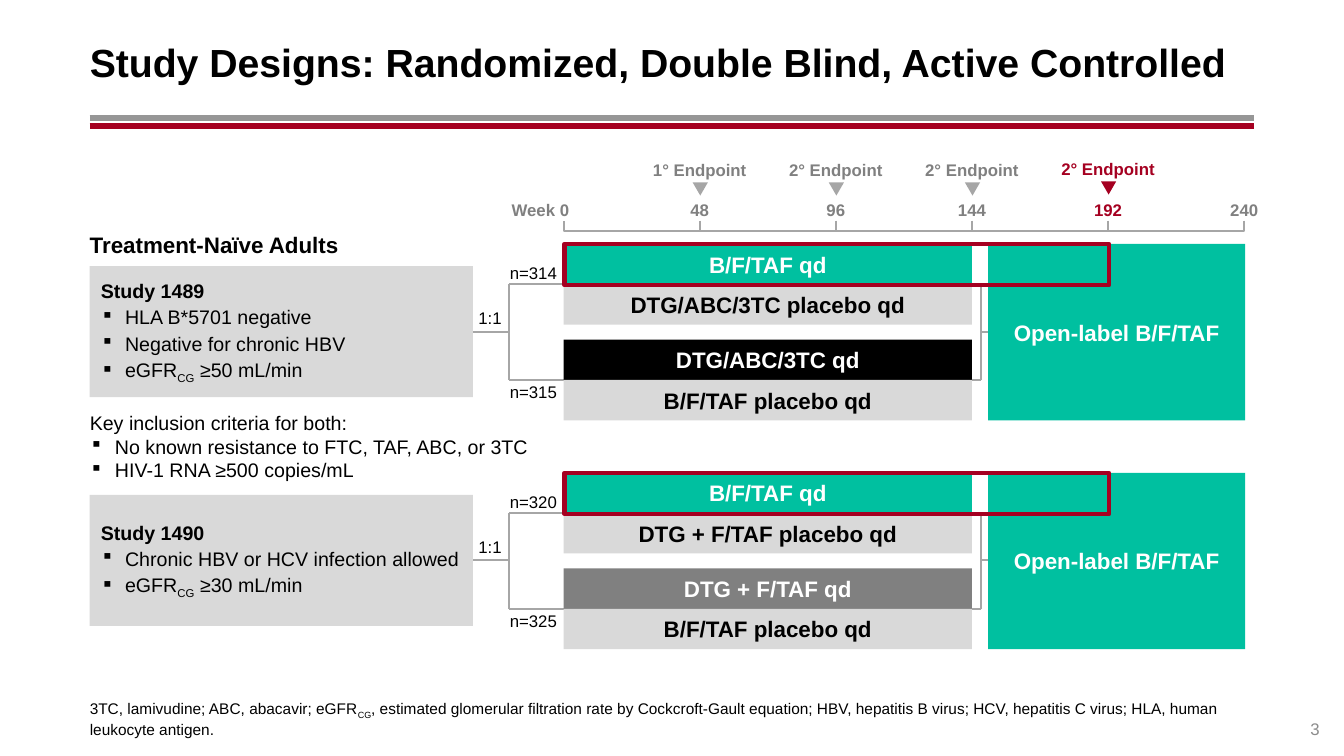
from lxml.etree import SubElement
from pptx import Presentation
from pptx.dml.color import RGBColor
from pptx.enum.shapes import MSO_CONNECTOR as LineKind, MSO_SHAPE as Preset
from pptx.enum.text import MSO_ANCHOR as Anchor, MSO_AUTO_SIZE as AutoSize, PP_ALIGN as Align
from pptx.oxml.ns import qn
from pptx.util import Pt

PX = 9144
COLORS = {
    "black": "000000", "white": "FFFFFF", "red": "A50021", "teal": "00C0A0",
    "pale": "D9D9D9", "line": "A6A6A6", "gray": "808080", "rule": "969696",
    "number": "8C8C8C",
}
WEEK_ZERO, WEEK_STEP = 559, 135
BAR_LEFT, BAR_WIDTH, BAR_HEIGHT = 559, 405, 40
BAR_OFFSETS = (0, 40, 95, 135)
OPEN_LEFT, OPEN_WIDTH, OPEN_HEIGHT = 980, 255, 175
STUDIES = [
    {
        "top": 242,
        "criteria": ["Study 1489", "HLA B*5701 negative", "Negative for chronic HBV",
                     "eGFR_CG_ ≥50 mL/min"],
        "sizes": ("n=314", "n=315"),
        "arms": [("B/F/TAF qd", "teal", "white"), ("DTG/ABC/3TC placebo qd", "pale", "black"),
                 ("DTG/ABC/3TC qd", "black", "white"), ("B/F/TAF placebo qd", "pale", "black")],
    },
    {
        "top": 469,
        "criteria": ["Study 1490", "Chronic HBV or HCV infection allowed",
                     "eGFR_CG_ ≥30 mL/min"],
        "sizes": ("n=320", "n=325"),
        "arms": [("B/F/TAF qd", "teal", "white"), ("DTG + F/TAF placebo qd", "pale", "black"),
                 ("DTG + F/TAF qd", "gray", "white"), ("B/F/TAF placebo qd", "pale", "black")],
    },
]
ENDPOINTS = [("48", "1° Endpoint", "gray"), ("96", "2° Endpoint", "gray"),
             ("144", "2° Endpoint", "gray"), ("192", "2° Endpoint", "red")]


def rgb(name):
    return RGBColor.from_string(COLORS[name])


def emu(*lengths):
    return [length * PX for length in lengths]


def set_frame(frame, insets=(0, 0, 0, 0), anchor=Anchor.TOP, wrap=True):
    frame.auto_size = AutoSize.NONE
    frame.word_wrap = wrap
    frame.vertical_anchor = anchor
    (frame.margin_left, frame.margin_top,
     frame.margin_right, frame.margin_bottom) = emu(*insets)


def set_indent(para, left, hanging, bullet):
    props = para._p.get_or_add_pPr()
    props.set("marL", str(left * PX))
    props.set("indent", str(-hanging * PX))
    if bullet:
        SubElement(props, qn("a:buSzPct")).set("val", "90000")
        SubElement(props, qn("a:buChar")).set("char", "▪")
    else:
        SubElement(props, qn("a:buNone"))


def fill_para(para, text, size, color="black", bold=False, align=Align.LEFT, before=0):
    para.alignment = align
    para.space_before = Pt(before)
    font = para.font
    font.name, font.size, font.bold = "Arial", Pt(size), bold
    font.color.rgb = rgb(color)
    for index, part in enumerate(text.split("_")):
        span = para.add_run()
        span.text = part
        if index % 2:
            span.font._element.set("baseline", "-25000")


def add_list(frame, lines, left, hanging, bold_head, before=0):
    for index, line in enumerate(lines):
        para = frame.add_paragraph() if index else frame.paragraphs[0]
        if index:
            set_indent(para, left, hanging, True)
        fill_para(para, line, 14, bold=bold_head and not index, before=before)


def add_box(page, *place):
    return page.shapes.add_textbox(*emu(*place))


def add_label(page, text, center, middle, color="black", bold=False):
    box = add_box(page, center - 24, middle - 10, 48, 20)
    set_frame(box.text_frame, anchor=Anchor.MIDDLE, wrap=False)
    fill_para(box.text_frame.paragraphs[0], text, 12, color, bold, Align.CENTER)


def add_block(page, place, fill=None, kind=Preset.RECTANGLE):
    block = page.shapes.add_shape(kind, *emu(*place))
    block.shadow.inherit = False
    block.line.fill.background()
    if fill:
        block.fill.solid()
        block.fill.fore_color.rgb = rgb(fill)
    else:
        block.fill.background()
    return block


def add_bar(page, text, place, fill, color):
    bar = add_block(page, place, fill)
    set_frame(bar.text_frame, (10, 5, 10, 5), Anchor.MIDDLE)
    fill_para(bar.text_frame.paragraphs[0], text, 16, color, True, Align.CENTER)


def add_line(page, start, end, color="line", width=1.5, arrow=False):
    line = page.shapes.add_connector(LineKind.STRAIGHT, *emu(*start, *end))
    line.line.color.rgb = rgb(color)
    line.line.width = Pt(width)
    if arrow:
        SubElement(line.line._get_or_add_ln(), qn("a:tailEnd")).set("type", "triangle")
    SubElement(line._element.spPr, qn("a:effectLst"))


def add_week_bracket(page, left):
    right, top, base = left + WEEK_STEP, 219, 229
    builder = page.shapes.build_freeform(right, top, PX)
    builder.add_line_segments([(right, base), (left, base), (left, top)], close=False)
    bracket = builder.convert_to_shape()
    bracket.shadow.inherit = False
    bracket.fill.background()
    bracket.line.color.rgb = rgb("line")
    bracket.line.width = Pt(1.5)


def add_timeline(page):
    add_label(page, "Week 0", 536, 208, "gray", True)
    add_label(page, "240", WEEK_ZERO + 5 * WEEK_STEP, 208, "gray", True)
    for index in range(5):
        add_week_bracket(page, WEEK_ZERO + index * WEEK_STEP)
    for index, (week, endpoint, color) in enumerate(ENDPOINTS, 1):
        center = WEEK_ZERO + index * WEEK_STEP
        lift = 1 if color == "red" else 0
        add_label(page, week, center, 208, color, True)
        add_label(page, endpoint, center, 168 - lift, color, True)
        marker = add_block(page, (center - 7, 181 - lift, 15, 13),
                           "red" if lift else "line", Preset.ISOSCELES_TRIANGLE)
        marker.rotation = 180


def add_study(page, top, criteria, sizes, arms):
    upper, middle, lower = top + 40, top + 87, top + 135
    add_line(page, (455, middle), (505, middle))
    add_line(page, (505, upper), (505, lower))
    add_line(page, (973, upper), (973, lower))
    add_line(page, (973, middle), (980, middle))
    for branch in (upper, lower):
        add_line(page, (505, branch), (611, branch), arrow=True)
        add_line(page, (973, branch), (958, branch))
    add_label(page, "1:1", 486, top + 73)
    for size, level in zip(sizes, (top + 29, top + 147)):
        add_label(page, size, 529, level)

    card = add_block(page, (89, top + 22, 380, 130), "pale")
    set_frame(card.text_frame, (11, 5, 0, 5), Anchor.MIDDLE)
    add_list(card.text_frame, criteria, 24, 24, True, before=2)

    add_bar(page, "Open-label B/F/TAF", (OPEN_LEFT, top, OPEN_WIDTH, OPEN_HEIGHT),
            "teal", "white")
    for (text, fill, color), offset in zip(arms, BAR_OFFSETS):
        add_bar(page, text, (BAR_LEFT, top + offset, BAR_WIDTH, BAR_HEIGHT), fill, color)
    outline = add_block(page, (560, top, 540, 41))
    outline.line.color.rgb = rgb("red")
    outline.line.width = Pt(3)


def place_text(holder, place, text, size, insets, anchor, bold=False):
    holder.left, holder.top, holder.width, holder.height = emu(*place)
    set_frame(holder.text_frame, insets, anchor)
    para = holder.text_frame.paragraphs[0]
    set_indent(para, 0, 0, False)
    fill_para(para, text, size, bold=bold)


def main():
    deck = Presentation()
    deck.slide_width, deck.slide_height = emu(1333, 750)
    page = deck.slides.add_slide(deck.slide_layouts[1])
    place_text(page.shapes.title, (89, 18, 1155, 86),
               "Study Designs: Randomized, Double Blind, Active Controlled",
               28, (0, 5, 10, 5), Anchor.MIDDLE, True)
    place_text(page.placeholders[1], (89, 696, 1155, 37),
               "3TC, lamivudine; ABC, abacavir; eGFR_CG_, estimated glomerular filtration rate by "
               "Cockcroft-Gault equation; HBV, hepatitis B virus; HCV, hepatitis C virus; "
               "HLA, human leukocyte antigen.", 11, (0, 0, 0, 0), Anchor.BOTTOM)
    for level, color in ((117, "rule"), (125, "red")):
        add_line(page, (89, level), (1244, level), color, 4.25)

    add_timeline(page)
    for study in STUDIES:
        add_study(page, **study)

    heading = add_box(page, 89, 224, 266, 37)
    set_frame(heading.text_frame, (0, 5, 10, 5))
    fill_para(heading.text_frame.paragraphs[0], "Treatment-Naïve Adults", 16, bold=True)

    inclusion = add_box(page, 89, 408, 442, 71)
    set_frame(inclusion.text_frame)
    add_list(inclusion.text_frame,
             ["Key inclusion criteria for both:", "No known resistance to FTC, TAF, ABC, or 3TC",
              "HIV-1 RNA ≥500 copies/mL"], 25, 25, False)

    number = add_box(page, 1244, 693, 65, 40)
    set_frame(number.text_frame, anchor=Anchor.BOTTOM)
    fill_para(number.text_frame.paragraphs[0], "3", 12, "number", align=Align.RIGHT)
    deck.save("out.pptx")


if __name__ == "__main__":
    main()
